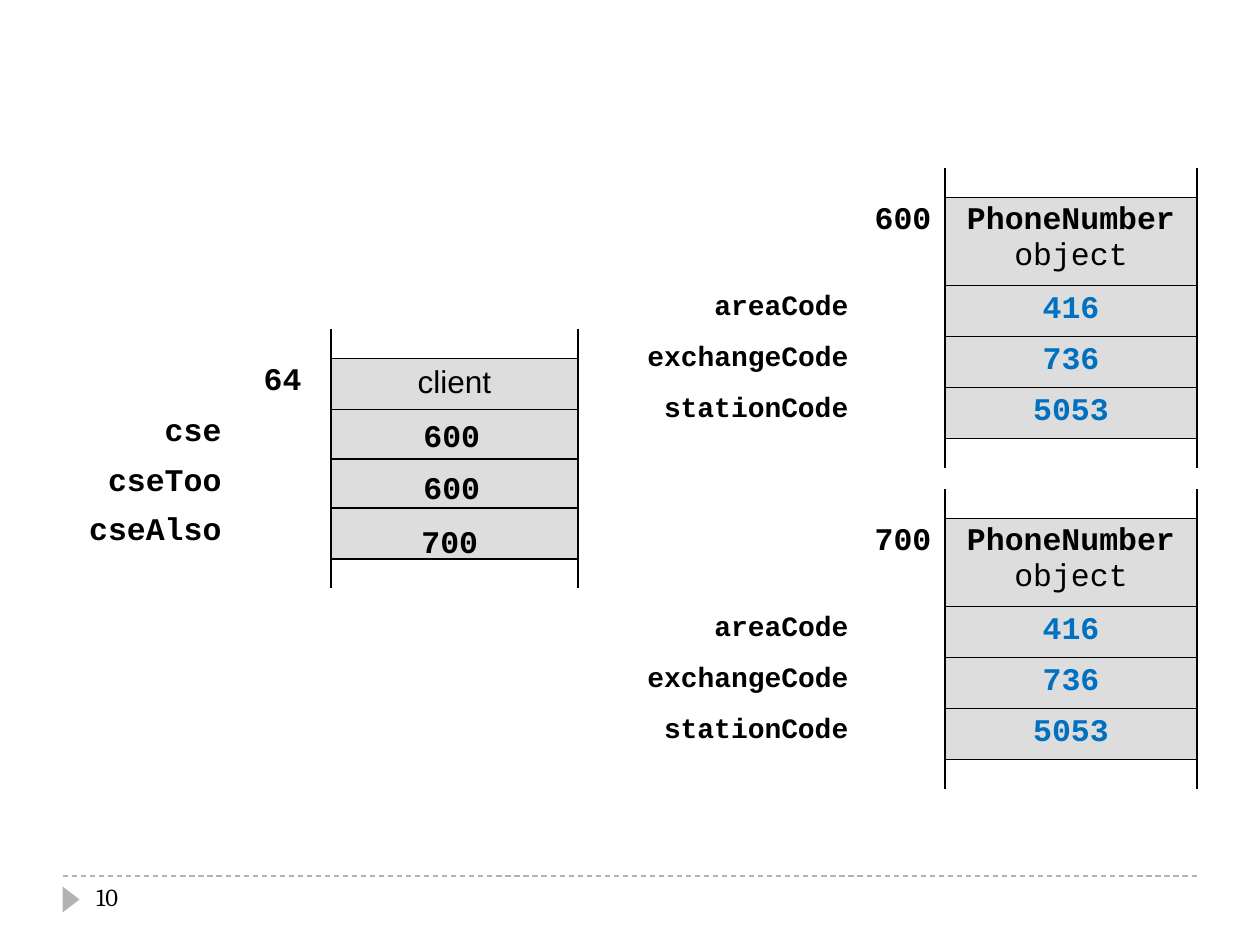
from lxml.etree import SubElement
from pptx import Presentation
from pptx.dml.color import RGBColor
from pptx.enum.dml import MSO_LINE
from pptx.enum.shapes import MSO_CONNECTOR, MSO_SHAPE
from pptx.enum.text import MSO_AUTO_SIZE, PP_ALIGN
from pptx.oxml.ns import qn
from pptx.util import Pt

COLORS = {"ink": "000000", "value": "0070C0", "slot": "DDDDDD", "footer": "B2B2B2"}
MONO = "Courier New"
NO_TABLE_STYLE = "{2D5ABB26-0587-4C30-8999-92F81FD0307C}"
EDGE, SLOT, HEADER = 29, 51, 84


def px(length):
    return round(length * 914400 / 126)


def color(name):
    return RGBColor.from_string(COLORS[name])


class MemoryDiagram:
    def __init__(self, deck):
        self.slide = deck.slides.add_slide(deck.slide_layouts[6])
        self.shapes = self.slide.shapes

    def add_text(self, paragraph, text, size=18, font=MONO, bold=True, ink="ink", align=None):
        paragraph.alignment = align
        run = paragraph.add_run()
        run.text = text
        run.font.size = Pt(size)
        run.font.name = font
        run.font.bold = bold
        run.font.color.rgb = color(ink)

    def label(self, left, top, width, height, text, wrap=False, **style):
        box = self.shapes.add_textbox(px(left), px(top), px(width), px(height))
        box.text_frame.word_wrap = wrap
        if not wrap:
            box.text_frame.auto_size = MSO_AUTO_SIZE.SHAPE_TO_FIT_TEXT
        self.add_text(box.text_frame.paragraphs[0], text, **style)

    def dashed_line(self, left, right, y):
        rule = self.shapes.add_connector(MSO_CONNECTOR.STRAIGHT, px(left), px(y), px(right), px(y))
        rule.line.color.rgb = color("footer")
        rule.line.width = Pt(0.75)
        rule.line.dash_style = MSO_LINE.DASH
        SubElement(rule._element.spPr, qn("a:effectLst"))

    def marker(self, left, top, width, height):
        arrow = self.shapes.add_shape(
            MSO_SHAPE.ISOSCELES_TRIANGLE, px(left), px(top), px(width), px(height))
        arrow.rotation = 90
        arrow.shadow.inherit = False
        arrow.fill.solid()
        arrow.fill.fore_color.rgb = color("footer")
        arrow.line.fill.background()

    def border(self, cell, sides):
        properties = cell._tc.get_or_add_tcPr()
        for side in sides:
            edge = SubElement(properties, qn(f"a:ln{side}"), w=str(Pt(1)))
            fill = SubElement(edge, qn("a:solidFill"))
            SubElement(fill, qn("a:srgbClr"), val=COLORS["ink"])

    def fill_cell(self, cell, lines, align):
        frame = cell.text_frame
        if not lines:
            SubElement(frame.paragraphs[0]._p, qn("a:endParaRPr"), sz="800")
        for index, (text, style) in enumerate(lines):
            paragraph = frame.add_paragraph() if index else frame.paragraphs[0]
            self.add_text(paragraph, text, align=align, **style)

    def memory(self, left, top, columns, slots, open_top=True):
        blank = (EDGE, [], [], [])
        rows = [blank] * open_top + slots + [blank]
        heights = [row[0] for row in rows]
        frame = self.shapes.add_table(
            len(rows), len(columns), px(left), px(top), px(sum(columns)), px(sum(heights)))
        table = frame.table
        table.first_row = table.horz_banding = False
        table._tbl.tblPr.find(qn("a:tableStyleId")).text = NO_TABLE_STYLE
        for column, width in zip(table.columns, columns):
            column.width = px(width)
        aligns = (PP_ALIGN.RIGHT, PP_ALIGN.CENTER, PP_ALIGN.CENTER)
        for index, (height, *contents) in enumerate(rows):
            table.rows[index].height = px(height)
            is_slot = rows[index] is not blank
            content_sides = "LRTB" if is_slot else "LRT" if index else "LRB"
            for position, sides in enumerate(("", "R", content_sides)):
                cell = table.cell(index, position)
                self.border(cell, sides)
                if is_slot and position == 2:
                    cell.fill.solid()
                    cell.fill.fore_color.rgb = color("slot")
                else:
                    cell.fill.background()
                self.fill_cell(cell, contents[position], aligns[position])


def variable(name):
    return (SLOT, [(name, {})], [], [])


def phone_number(address):
    header = [("PhoneNumber", {}), ("object", {"bold": False})]
    fields = [("areaCode", "416"), ("exchangeCode", "736"), ("stationCode", "5053")]
    return [(HEADER, [], [(address, {})], header)] + [
        (SLOT, [(name, {"size": 16})], [], [(value, {"ink": "value"})])
        for name, value in fields]


def main():
    deck = Presentation()
    deck.slide_width, deck.slide_height = px(1260), px(945)
    diagram = MemoryDiagram(deck)

    diagram.dashed_line(63, 1197, 876)
    diagram.marker(58, 891, 26, 17)
    diagram.label(84, 876, 273, 50, "10", wrap=True, size=14, font="Cambria", bold=False)

    client_columns = (161, 97, 247)
    client = (SLOT, [], [("64", {})], [("client", {"font": "Arial", "bold": False})])
    diagram.memory(73, 329, client_columns, [client, variable("cse")])
    for name, top in (("cseToo", 459), ("cseAlso", 508)):
        diagram.memory(73, top, client_columns, [variable(name)], open_top=False)

    for address, top in (("600", 168), ("700", 489)):
        diagram.memory(630, top, (231, 84, 252), phone_number(address))

    for reference, left, top in (("600", 411, 410), ("600", 411, 462), ("700", 409, 516)):
        diagram.label(left, top, 82, 50, reference)

    deck.save("out.pptx")


if __name__ == "__main__":
    main()
